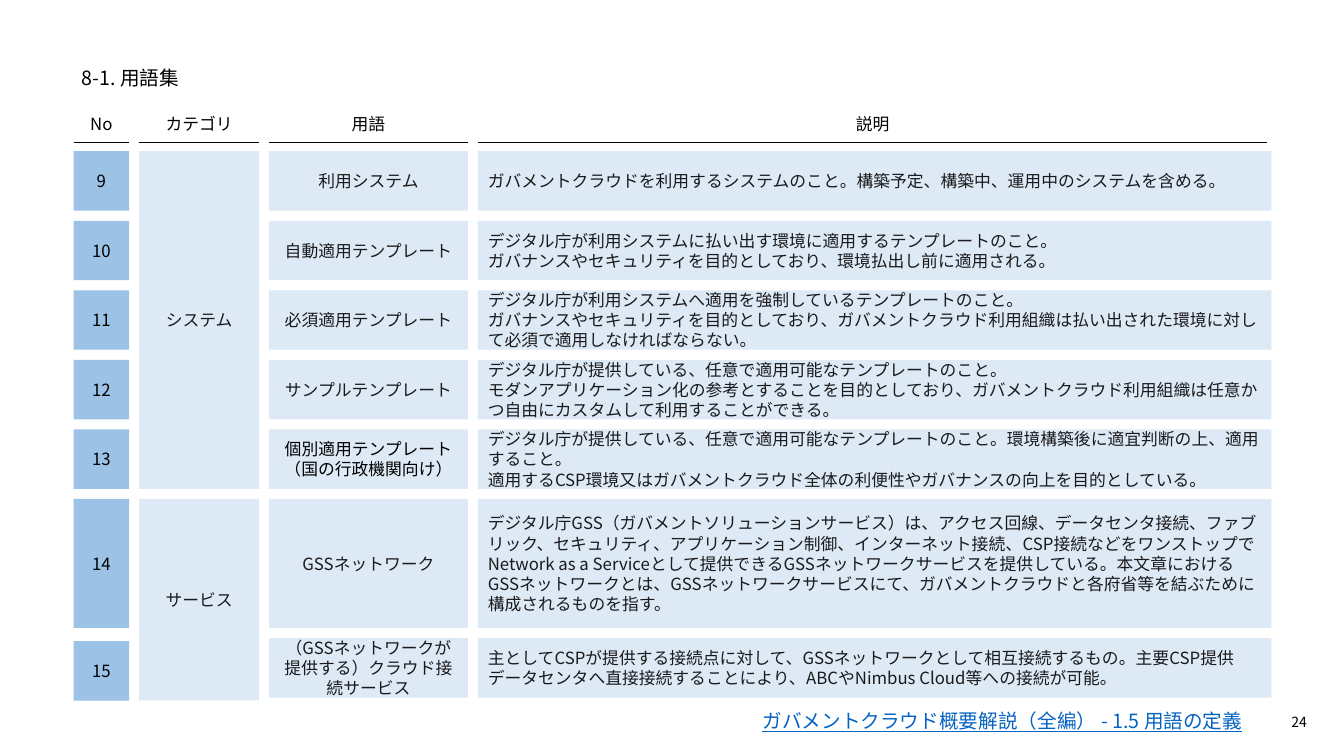
import pptx
import pptx.util
import pptx.dml.color
import pptx.enum.shapes
import pptx.enum.text
import pptx.oxml
import pptx.oxml.ns
import lxml.etree

TITLE = "8-1. 用語集"
LINK = "ガバメントクラウド概要解説（全編） - 1.5 用語の定義"
PAGE_NUMBER = "24"
HEADERS = ["No", "カテゴリ", "用語", "説明"]
CATEGORIES = [("システム", 0, 4), ("サービス", 5, 6)]
TERMS = [
    ("9", "利用システム",
     "ガバメントクラウドを利用するシステムのこと。構築予定、構築中、運用中のシステムを含める。"),
    ("10", "自動適用テンプレート",
     "デジタル庁が利用システムに払い出す環境に適用するテンプレートのこと。\v"
     "ガバナンスやセキュリティを目的としており、環境払出し前に適用される。"),
    ("11", "必須適用テンプレート",
     "デジタル庁が利用システムへ適用を強制しているテンプレートのこと。\v"
     "ガバナンスやセキュリティを目的としており、ガバメントクラウド利用組織は払い出された環境に対して"
     "必須で適用しなければならない。"),
    ("12", "サンプルテンプレート",
     "デジタル庁が提供している、任意で適用可能なテンプレートのこと。\v"
     "モダンアプリケーション化の参考とすることを目的としており、ガバメントクラウド利用組織は任意かつ"
     "自由にカスタムして利用することができる。"),
    ("13", "個別適用テンプレート\n（国の行政機関向け）",
     "デジタル庁が提供している、任意で適用可能なテンプレートのこと。環境構築後に適宜判断の上、適用すること。\n"
     "適用するCSP環境又はガバメントクラウド全体の利便性やガバナンスの向上を目的としている。"),
    ("14", "GSSネットワーク",
     "デジタル庁GSS（ガバメントソリューションサービス）は、アクセス回線、データセンタ接続、ファブリック、"
     "セキュリティ、アプリケーション制御、インターネット接続、CSP接続などをワンストップで "
     "Network as a Serviceとして提供できるGSSネットワークサービスを提供している。"
     "本文章におけるGSSネットワークとは、GSSネットワークサービスにて、"
     "ガバメントクラウドと各府省等を結ぶために構成されるものを指す。"),
    ("15", "（GSSネットワークが提供する）クラウド接続サービス",
     "主としてCSPが提供する接続点に対して、GSSネットワークとして相互接続するもの。"
     "主要CSP提供データセンタへ直接接続することにより、ABCやNimbus Cloud等への接続が可能。"),
]

FONT = "Noto Sans CJK JP"
BLACK, INK, LINK_BLUE = "000000", "1A1A1C", "0563C1"
NUMBER_FILL, CELL_FILL = "9CC2E5", "DDEAF6"
LEFT, TOP, GAP = 0.73, 1.5, 0.1
WIDTHS = [0.55, 1.19, 1.97, 7.87]
HEIGHTS = [0.59] * 5 + [1.28, 0.59]
HEADER_TOP, RULE_TOP = 1.08, 1.41
LAST_DROP = 0.03
INSETS = (0.1, 0.05, 0.1, 0.05)
ALIGN = pptx.enum.text.PP_ALIGN
ANCHOR = pptx.enum.text.MSO_ANCHOR
inch = pptx.util.Inches


def color(value):
    return pptx.dml.color.RGBColor.from_string(value)


def starts(first, sizes):
    return [first + sum(sizes[:i]) + GAP * i for i in range(len(sizes))]


def write(box, text, ink, align, size=12, anchor=ANCHOR.MIDDLE, insets=INSETS):
    frame = box.text_frame
    frame.word_wrap = True
    frame.vertical_anchor = anchor
    frame.margin_left, frame.margin_top, frame.margin_right, frame.margin_bottom = map(inch, insets)
    frame.text = text
    for para in frame.paragraphs:
        para.alignment = align
        for span in para.runs:
            span.font.name = FONT
            span.font.size = pptx.util.Pt(size)
            span.font.color.rgb = color(ink)
            east = lxml.etree.SubElement(span.font._element, pptx.oxml.ns.qn("a:ea"))
            east.set("typeface", FONT)
    return frame


def add_text(shapes, place, *args, **options):
    return write(shapes.add_textbox(*map(inch, place)), *args, **options)


def add_cell(page, place, text, fill, ink, align=ALIGN.CENTER):
    box = page.shapes.add_shape(pptx.enum.shapes.MSO_SHAPE.RECTANGLE, *map(inch, place))
    box.shadow.inherit = False
    box.fill.solid()
    box.fill.fore_color.rgb = color(fill)
    box.line.fill.background()
    write(box, text, ink, align)


def add_header(page, left, width, text):
    group = page.shapes.add_group_shape()
    add_text(group.shapes, (left, HEADER_TOP, width, 0.3), text, BLACK, ALIGN.CENTER, anchor=ANCHOR.TOP)
    rule = group.shapes.add_connector(
        pptx.enum.shapes.MSO_CONNECTOR.STRAIGHT, *map(inch, (left, RULE_TOP, left + width, RULE_TOP)))
    rule.line.color.rgb = color(BLACK)
    rule.line.width = pptx.util.Pt(0.75)
    lxml.etree.SubElement(rule._element.spPr, pptx.oxml.ns.qn("a:effectLst"))


def main():
    deck = pptx.Presentation()
    deck.slide_width, deck.slide_height = inch(13.33), inch(7.5)
    page = deck.slides.add_slide(deck.slide_layouts[6])
    columns, rows = starts(LEFT, WIDTHS), starts(TOP, HEIGHTS)
    last = len(TERMS) - 1

    add_text(page.shapes, (0.81, 0.6, 11.72, 0.34), TITLE, BLACK, ALIGN.LEFT, size=14, insets=(0, 0, 0, 0))
    header_widths = WIDTHS[:3] + [WIDTHS[3] - 0.04]
    for left, width, text in zip(columns, header_widths, HEADERS):
        add_header(page, left, width, text)

    for text, first, final in CATEGORIES:
        bottom = rows[final] + HEIGHTS[final] + (LAST_DROP if final == last else 0)
        add_cell(page, (columns[1], rows[first], WIDTHS[1], bottom - rows[first]), text, CELL_FILL, INK)

    for index, (number, term, meaning) in enumerate(TERMS):
        top, height = rows[index], HEIGHTS[index]
        drop = LAST_DROP if index == last else 0
        term_ink = BLACK if number == "13" else INK
        add_cell(page, (columns[0], top + drop, WIDTHS[0], height), number, NUMBER_FILL, BLACK)
        add_cell(page, (columns[2], top, WIDTHS[2], height), term, CELL_FILL, term_ink)
        add_cell(page, (columns[3], top, WIDTHS[3], height), meaning, CELL_FILL, INK, ALIGN.LEFT)

    link = add_text(page.shapes, (0.81, 6.96, 11.61, 0.4), LINK, LINK_BLUE, ALIGN.RIGHT,
                    size=14, insets=(0, 0.05, 0.1, 0.05))
    link.paragraphs[0].line_spacing = 0.9
    link.paragraphs[0].space_before = pptx.util.Pt(10)
    link.paragraphs[0].runs[0].font.underline = True
    add_text(page.shapes, (12.47, 6.96, 0.49, 0.4), PAGE_NUMBER, BLACK, ALIGN.RIGHT,
             size=10, insets=(0.1, 0.05, 0, 0.05))
    deck.save("out.pptx")


if __name__ == "__main__":
    main()
